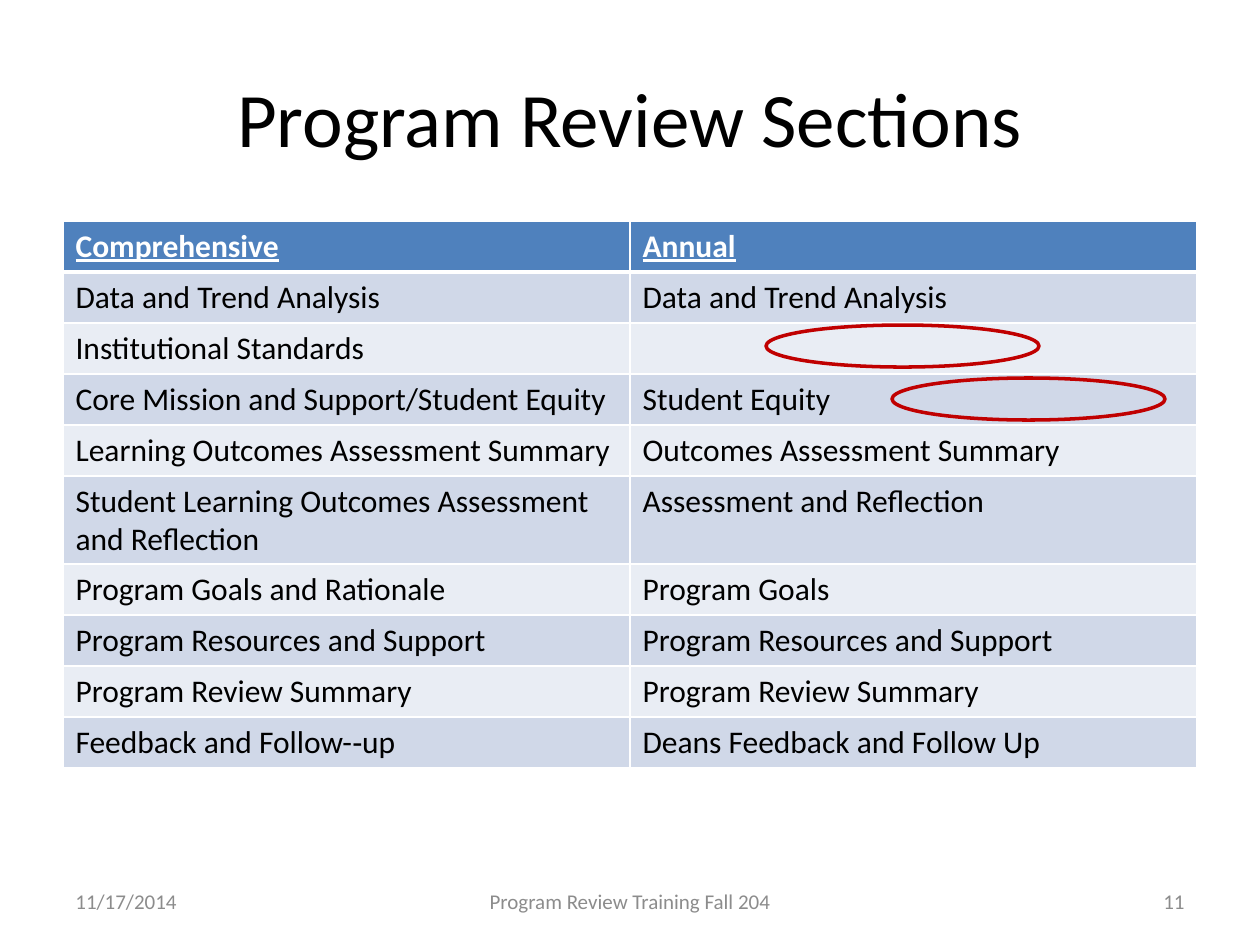
from lxml.etree import SubElement
from pptx import Presentation
from pptx.dml.color import RGBColor
from pptx.enum.shapes import MSO_SHAPE
from pptx.enum.text import MSO_ANCHOR, PP_ALIGN
from pptx.oxml.ns import qn
from pptx.util import Emu, Pt

PX_PER_INCH = 126
HEADER_FILL, BAND_FILLS = "4F81BD", ("D0D8E8", "E9EDF4")
WHITE, BLACK, GREY, RED = "FFFFFF", "000000", "8C8C8C", "C00000"
MARGIN, CONTENT_WIDTH = 63, 1134
TABLE_TOP, ROW_HEIGHT = 221, 51

SECTIONS = [
    ("Comprehensive", "Annual"),
    ("Data and Trend Analysis", "Data and Trend Analysis"),
    ("Institutional Standards", ""),
    ("Core Mission and Support/Student Equity", "Student Equity"),
    ("Learning Outcomes Assessment Summary", "Outcomes Assessment Summary"),
    ("Student Learning Outcomes Assessment and Reflection", "Assessment and Reflection"),
    ("Program Goals and Rationale", "Program Goals"),
    ("Program Resources and Support", "Program Resources and Support"),
    ("Program Review Summary", "Program Review Summary"),
    ("Feedback and Follow-‐up", "Deans Feedback and Follow Up"),
]


def px(length):
    return Emu(round(length * 914400 / PX_PER_INCH))


def color(value):
    return RGBColor.from_string(value)


def write_text(frame, text, size=18, fill=BLACK, align=PP_ALIGN.LEFT,
               anchor=MSO_ANCHOR.TOP, bold=False, underline=False):
    frame.word_wrap = True
    frame.vertical_anchor = anchor
    paragraph = frame.paragraphs[0]
    paragraph.alignment = align
    if not text:
        return
    run = paragraph.add_run()
    run.text = text
    font = run.font
    font.name, font.size = "Calibri", Pt(size)
    font.bold, font.underline = bold, underline
    font.color.rgb = color(fill)


def add_title(slide, text):
    title = slide.shapes.title
    title.left, title.top = px(MARGIN), px(38)
    title.width, title.height = px(CONTENT_WIDTH), px(158)
    write_text(title.text_frame, text, size=44, align=PP_ALIGN.CENTER,
               anchor=MSO_ANCHOR.MIDDLE)


def add_footer(slide, text, left, width, align):
    box = slide.shapes.add_textbox(px(left), px(876), px(width), px(50))
    write_text(box.text_frame, text, size=12, fill=GREY, align=align,
               anchor=MSO_ANCHOR.MIDDLE)


def set_borders(cell, top=1, bottom=1):
    """Draw white borders; call before the cell is filled, as the schema orders them."""
    properties = cell._tc.get_or_add_tcPr()
    for side, width in (("L", 1), ("R", 1), ("T", top), ("B", bottom)):
        line = SubElement(properties, qn(f"a:ln{side}"), w=str(Pt(width)))
        fill = SubElement(line, qn("a:solidFill"))
        SubElement(fill, qn("a:srgbClr"), val=WHITE)


def add_sections_table(slide):
    table = slide.shapes.add_table(
        len(SECTIONS), 2, px(MARGIN), px(TABLE_TOP),
        px(CONTENT_WIDTH), px(ROW_HEIGHT * len(SECTIONS))).table
    for row_index, texts in enumerate(SECTIONS):
        header = row_index == 0
        band = HEADER_FILL if header else BAND_FILLS[(row_index - 1) % 2]
        for column_index, text in enumerate(texts):
            cell = table.cell(row_index, column_index)
            set_borders(cell, top=3 if row_index == 1 else 1, bottom=3 if header else 1)
            cell.fill.solid()
            cell.fill.fore_color.rgb = color(band)
            write_text(cell.text_frame, text, fill=WHITE if header else BLACK,
                       bold=header, underline=header)


def add_highlight(slide, left, top):
    ellipse = slide.shapes.add_shape(MSO_SHAPE.OVAL, px(left), px(top), px(273), px(42))
    ellipse.shadow.inherit = False
    ellipse.fill.background()
    ellipse.line.color.rgb = color(RED)
    ellipse.line.width = Pt(2)


def main():
    presentation = Presentation()
    presentation.slide_width, presentation.slide_height = px(1260), px(945)
    slide = presentation.slides.add_slide(presentation.slide_layouts[5])

    add_title(slide, "Program Review Sections")
    add_footer(slide, "11/17/2014", MARGIN, 294, PP_ALIGN.LEFT)
    add_footer(slide, "Program Review Training Fall 204", 430, 400, PP_ALIGN.CENTER)
    add_footer(slide, "11", 903, 294, PP_ALIGN.RIGHT)
    add_sections_table(slide)
    add_highlight(slide, 766, 325)
    add_highlight(slide, 892, 378)

    presentation.save("out.pptx")


if __name__ == "__main__":
    main()
